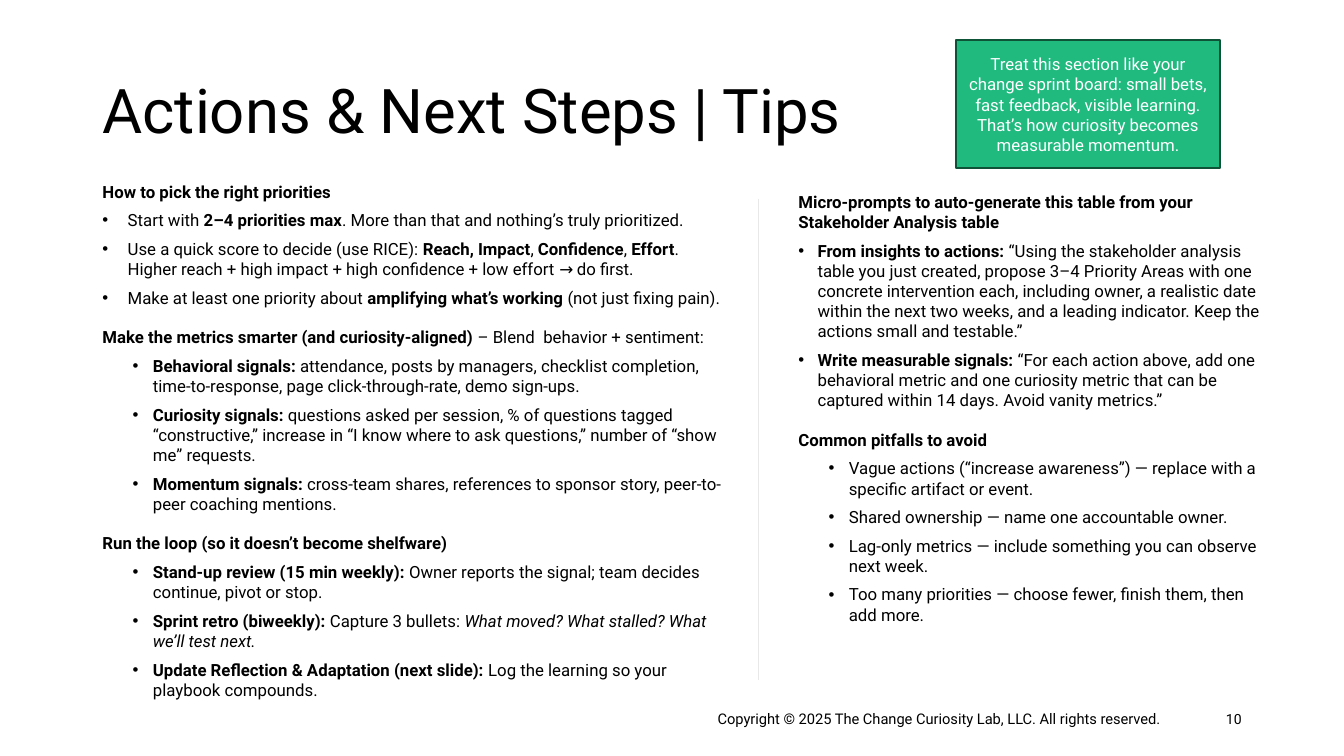
from lxml import etree
from pptx import Presentation
from pptx import util as u
from pptx.dml.color import RGBColor
from pptx.enum import shapes, text
from pptx.oxml import ns

HUES = {"ink": "000000", "paper": "FFFFFF", "green": "20BA7F",
        "edge": "0E5238", "rule": "E8E8E8"}
FONT = "Roboto"
COLS, ROWS = 160, 90

# kind of paragraph: level, left margin and hanging indent in inches
KINDS = {"head": (0, 0, 0), "wide": (0, 0.25, 0.25),
         "slim": (0, 0.19, 0.19), "deep": (1, 0.5, 0.2)}

# "|" parts the runs; a run that opens with "*" is bold, with "~" italic
TIPS = [
    ("head", "*How to pick the right priorities"),
    ("wide", "Start with |*2–4 priorities max|. More than that and nothing’s truly prioritized."),
    ("wide", "Use a quick score to decide (use RICE): |*Reach, Impact|, |*Confidence|, |*Effort|"
             ". Higher reach + high impact + high confidence + low effort → do first."),
    ("wide", "Make at least one priority about |*amplifying what’s working| (not just fixing pain)."),
    ("head", "*Make the metrics smarter (and curiosity-aligned) |– Blend  behavior + sentiment:"),
    ("deep", "*Behavioral signals:| attendance, posts by managers, checklist completion, "
             "time-to-response, page click-through-rate, demo sign-ups."),
    ("deep", "*Curiosity signals:| questions asked per session, % of questions tagged "
             "“constructive,” increase in “I know where to ask questions,” "
             "number of “show me” requests."),
    ("deep", "*Momentum signals:| cross-team shares, references to sponsor story, "
             "peer-to-peer coaching mentions."),
    ("head", "*Run the loop (so it doesn’t become shelfware)"),
    ("deep", "*Stand-up review (15 min weekly):| Owner reports the signal; "
             "team decides continue, pivot or stop."),
    ("deep", "*Sprint retro (biweekly):| Capture 3 bullets: "
             "|~What moved? What stalled? What we’ll test next."),
    ("deep", "*Update Reflection & Adaptation (next slide):| Log the learning "
             "so your playbook compounds."),
]
PROMPTS = [
    ("head", "*Micro-prompts to auto-generate this table from your Stakeholder Analysis table"),
    ("slim", "*From insights to actions: |“Using the stakeholder analysis table you just created, "
             "propose 3–4 Priority Areas with one concrete intervention each, including owner, "
             "a realistic date within the next two weeks, and a leading indicator. "
             "Keep the actions small and testable.”"),
    ("slim", "*Write measurable signals: |“For each action above, add one behavioral metric and "
             "one curiosity metric that can be captured within 14 days. Avoid vanity metrics.”"),
    ("head", "*Common pitfalls to avoid"),
    ("deep", "Vague actions (“increase awareness”) — replace with a specific artifact or event."),
    ("deep", "Shared ownership — name one accountable owner."),
    ("deep", "Lag-only metrics — include something you can observe next week."),
    ("deep", "Too many priorities — choose fewer, finish them, then add more."),
]


def hue(name):
    return RGBColor.from_string(HUES[name])


class Deck:
    """Holds the style, the grid and the current slide."""

    def __init__(self):
        self.prs = Presentation()
        self.prs.slide_width = u.Inches(13.33)
        self.prs.slide_height = u.Inches(7.5)
        self.slide = self.prs.slides.add_slide(self.prs.slide_layouts[3])

    def grid(self, col, row):
        return (round(col * self.prs.slide_width / COLS),
                round(row * self.prs.slide_height / ROWS))

    def place(self, item, at):
        item.left, item.top = self.grid(*at[:2])
        item.width, item.height = self.grid(*at[2:])

    def frame(self, item, anchor):
        frame = item.text_frame
        frame.word_wrap = True
        frame.auto_size = text.MSO_AUTO_SIZE.NONE
        frame.vertical_anchor = anchor
        return frame

    def fill(self, para, words, size, ink="ink"):
        """Adds the words to the paragraph run by run."""
        for part in words.split("|"):
            run = para.add_run()
            run.text = part.lstrip("*~")
            font = run.font
            font.name, font.size = FONT, u.Pt(size)
            font.bold, font.italic = part[0] == "*", part[0] == "~"
            font.color.rgb = hue(ink)

    def title(self, words, at):
        item = self.slide.shapes.title
        self.place(item, at)
        para = self.frame(item, text.MSO_ANCHOR.MIDDLE).paragraphs[0]
        para.alignment = text.PP_ALIGN.LEFT
        para.line_spacing = 0.9
        run = para.add_run()
        run.text = words
        run.font.name, run.font.size = FONT, u.Pt(44)
        run.font.color.rgb = hue("ink")

    def list(self, slot, rows, at):
        item = self.slide.placeholders[slot]
        self.place(item, at)
        frame = self.frame(item, text.MSO_ANCHOR.TOP)
        for i, (kind, words) in enumerate(rows):
            para = frame.add_paragraph() if i else frame.paragraphs[0]
            self.mark(para, kind)
            para.space_before = u.Pt(8 if i and kind == "head" else 0)
            para.space_after = u.Pt(6)
            para.line_spacing = 1.0
            self.fill(para, words, 12)

    def mark(self, para, kind):
        """Sets level, indent and bullet."""
        para.level, left, hang = KINDS[kind]
        props = para._p.get_or_add_pPr()
        props.set("marL", str(u.Inches(left)))
        props.set("indent", str(-u.Inches(hang)))
        if kind == "head":
            etree.SubElement(props, ns.qn("a:buNone"))
        else:
            etree.SubElement(props, ns.qn("a:buFont")).set("typeface", "Arial")
            etree.SubElement(props, ns.qn("a:buChar")).set("char", "•")

    def note(self, words, size, at, align, anchor):
        item = self.slide.shapes.add_textbox(0, 0, 0, 0)
        self.place(item, at)
        para = self.frame(item, anchor).paragraphs[0]
        para.alignment = align
        self.fill(para, words, size)

    def card(self, words, at):
        item = self.slide.shapes.add_shape(shapes.MSO_SHAPE.RECTANGLE, 0, 0, 0, 0)
        self.place(item, at)
        item.shadow.inherit = False
        item.fill.solid()
        item.fill.fore_color.rgb = hue("green")
        item.line.color.rgb = hue("edge")
        item.line.width = u.Pt(1.5)
        para = self.frame(item, text.MSO_ANCHOR.MIDDLE).paragraphs[0]
        para.alignment = text.PP_ALIGN.CENTER
        self.fill(para, words, 12, "paper")

    def rule(self, col, top, end):
        item = self.slide.shapes.add_connector(
            shapes.MSO_CONNECTOR.STRAIGHT, *self.grid(col, top), *self.grid(col, end))
        item.line.color.rgb = hue("rule")
        item.line.width = u.Pt(0.75)
        etree.SubElement(item._element.spPr, ns.qn("a:effectLst"))


def main():
    deck = Deck()
    deck.note("Copyright © 2025 The Change Curiosity Lab, LLC. All rights reserved.", 10.5,
              (84.25, 83.9, 57.25, 3.4), text.PP_ALIGN.LEFT, text.MSO_ANCHOR.TOP)
    deck.title("Actions & Next Steps | Tips", (11, 4.8, 138, 17.4))
    deck.note("10", 10, (141.5, 83.2, 7.5, 4.8), text.PP_ALIGN.RIGHT, text.MSO_ANCHOR.MIDDLE)
    deck.list(1, TIPS, (11, 21, 76.35, 62.8))
    deck.list(2, PROMPTS, (93.85, 22.2, 58.2, 53.3))
    deck.rule(90.25, 23.65, 81)
    deck.card("Treat this section like your change sprint board: small bets, fast feedback, "
              "visible learning. That’s how curiosity becomes measurable momentum.",
              (113.8, 4.8, 31.45, 15.25))
    deck.prs.save("out.pptx")


if __name__ == "__main__":
    main()
